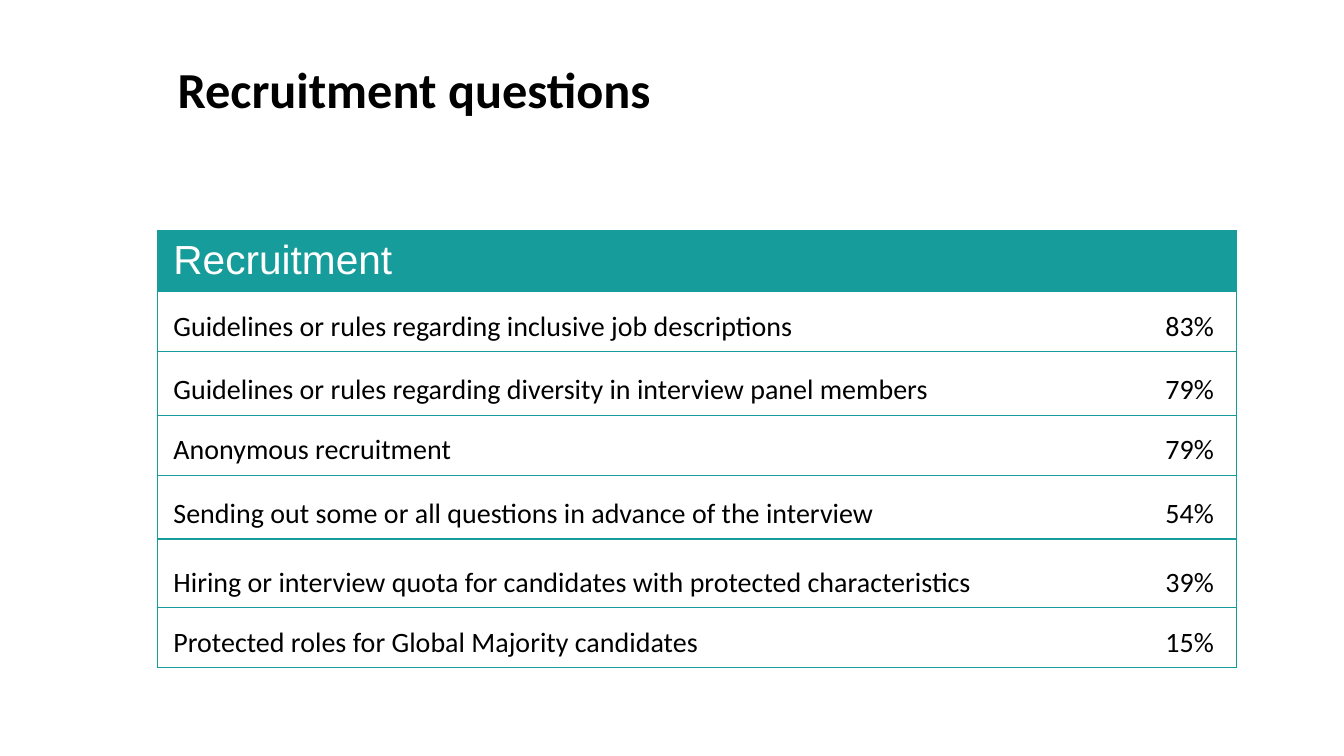
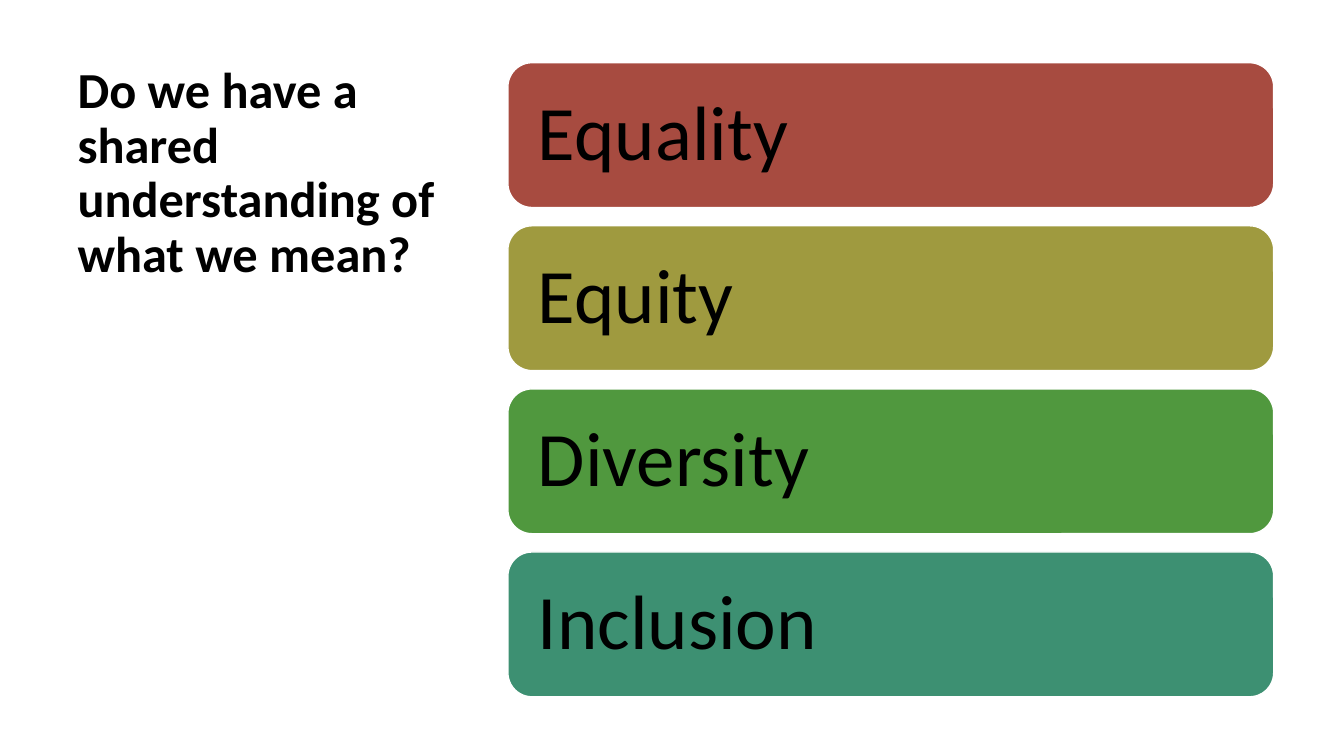
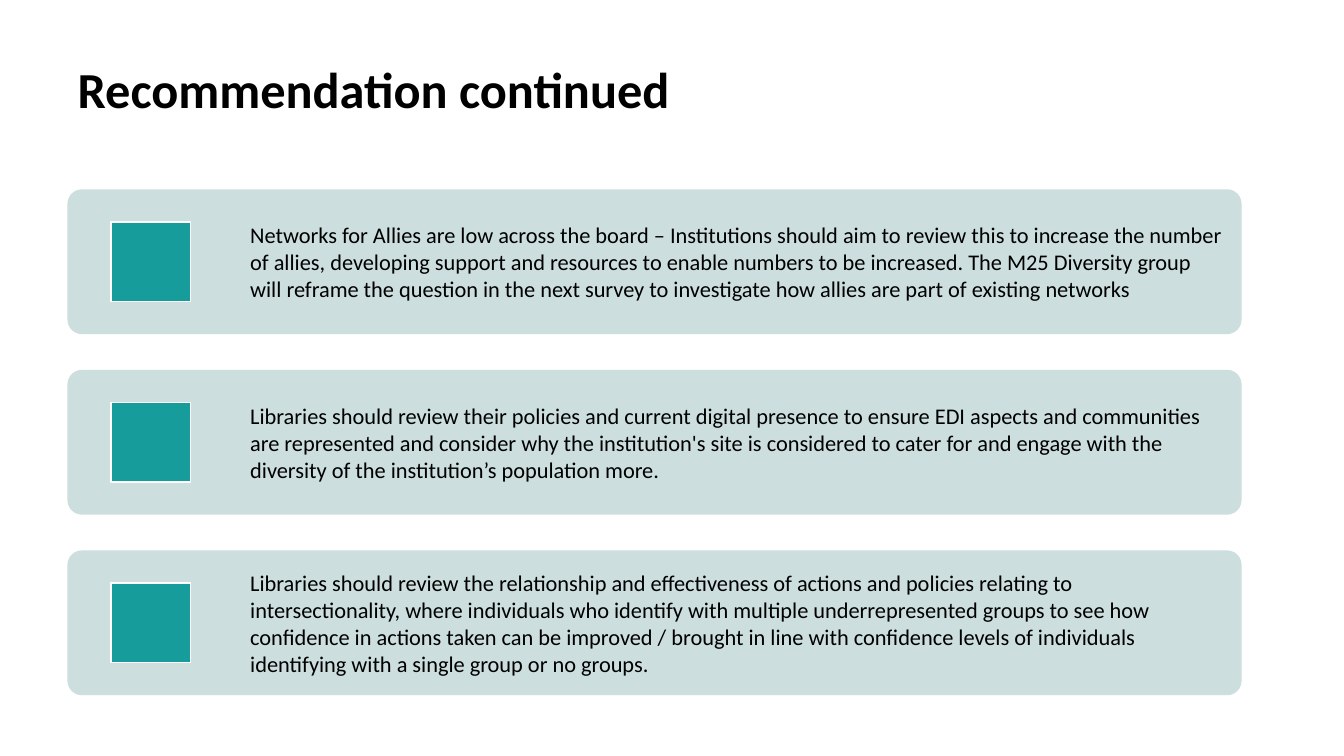
from lxml.etree import SubElement
from pptx import Presentation
from pptx.dml.color import RGBColor
from pptx.enum.shapes import MSO_SHAPE
from pptx.enum.text import MSO_ANCHOR, MSO_AUTO_SIZE, PP_ALIGN
from pptx.oxml.ns import qn
from pptx.util import Cm, Pt

COLOURS = {
    "text": "000000",
    "white": "FFFFFF",
    "teal": "169C9A",
    "mist": "CCDEDE",
    "red": "A74B40",
    "olive": "9F9A3F",
    "green": "50983E",
    "sea": "3D9072",
}
TITLE_TOP = 1.52
MARGIN = 1.7
BLOCK_HEIGHT = 3.65

RECRUITMENT = [
    ("Recruitment", "", 1.52),
    ("Guidelines or rules regarding inclusive job descriptions", "83%", 1.52),
    ("Guidelines or rules regarding diversity in interview panel members", "79%", 1.6),
    ("Anonymous recruitment", "79%", 1.52),
    ("Sending out some or all questions in advance of the interview", "54%", 1.6),
    ("Hiring or interview quota for candidates with protected characteristics", "39%", 1.73),
    ("Protected roles for Global Majority candidates", "15%", 1.52),
]
TERMS = [("Equality", "red"), ("Equity", "olive"), ("Diversity", "green"), ("Inclusion", "sea")]
RECOMMENDATIONS = [
    "Networks for Allies are low across the board – Institutions should aim to review this "
    "to increase the number of allies, developing support and resources to enable numbers "
    "to be increased. The M25 Diversity group will reframe the question in the next survey "
    "to investigate how allies are part of existing networks",
    "Libraries should review their policies and current digital presence to ensure EDI "
    "aspects and communities are represented and consider why the institution's site is "
    "considered to cater for and engage with the diversity of the institution’s population more.",
    "Libraries should review the relationship and effectiveness of actions and policies "
    "relating to intersectionality, where individuals who identify with multiple "
    "underrepresented groups to see how confidence in actions taken can be improved / "
    "brought in line with confidence levels of individuals identifying with a single group "
    "or no groups.",
]


def rgb(colour):
    """Return the named colour."""
    return RGBColor.from_string(COLOURS[colour])


def write(frame, text, size, colour="text", font="Calibri", bold=False,
          align=PP_ALIGN.LEFT, spacing=None):
    """Write one formatted run into the first paragraph of a frame."""
    paragraph = frame.paragraphs[0]
    paragraph.alignment = align
    paragraph.line_spacing = spacing
    run = paragraph.add_run()
    run.text = text
    run.font.name = font
    run.font.size = Pt(size)
    run.font.bold = bold
    run.font.color.rgb = rgb(colour)


def add_titled_slide(deck, text, left, width, height=3.15):
    """Add a slide with the shared title style."""
    slide = deck.slides.add_slide(deck.slide_layouts[5])
    title = slide.shapes.title
    title.left, title.top = Cm(left), Cm(TITLE_TOP)
    title.width, title.height = Cm(width), Cm(height)
    frame = title.text_frame
    frame.word_wrap = True
    frame.auto_size = MSO_AUTO_SIZE.NONE
    frame.vertical_anchor = MSO_ANCHOR.TOP
    write(frame, text, 36, bold=True, spacing=0.9)
    return slide


def add_block(slide, kind, left, top, width, height, fill, outline=None):
    """Add a flat filled shape with an optional outline."""
    block = slide.shapes.add_shape(kind, Cm(left), Cm(top), Cm(width), Cm(height))
    block.shadow.inherit = False
    block.fill.solid()
    block.fill.fore_color.rgb = rgb(fill)
    if outline:
        block.line.color.rgb = rgb(outline)
        block.line.width = Pt(1)
    else:
        block.line.fill.background()
    return block


def fill_block(block, text, size, left, right, spacing=None):
    """Write text into a block, centred vertically between side insets."""
    frame = block.text_frame
    frame.word_wrap = True
    frame.vertical_anchor = MSO_ANCHOR.MIDDLE
    frame.margin_left, frame.margin_right = Cm(left), Cm(right)
    frame.margin_top = frame.margin_bottom = Cm(0.3)
    write(frame, text, size, spacing=spacing)


def set_borders(cell, sides, colour):
    """Draw the given sides of a cell and clear the others."""
    properties = cell._tc.get_or_add_tcPr()
    for position, side in enumerate("LRTB"):
        border = SubElement(properties, qn(f"a:ln{side}"), w=str(Pt(1)))
        if side in sides:
            fill = SubElement(border, qn("a:solidFill"))
            SubElement(fill, qn("a:srgbClr"), val=COLOURS[colour])
        else:
            SubElement(border, qn("a:noFill"))
        properties.insert(position, border)


def format_cell(cell, fill, sides, right_inset):
    """Set the fill, borders and insets of a cell."""
    cell.fill.solid()
    cell.fill.fore_color.rgb = rgb(fill)
    cell.vertical_anchor = MSO_ANCHOR.BOTTOM
    cell.margin_left, cell.margin_right = Cm(0.41), Cm(right_inset)
    cell.margin_top = cell.margin_bottom = Cm(0.2)
    set_borders(cell, sides, "teal")


def add_recruitment_table(slide):
    """Add the table of recruitment measures and their shares."""
    widths = (24.23, 2.97)
    height = sum(row[2] for row in RECRUITMENT)
    table = slide.shapes.add_table(len(RECRUITMENT), 2, Cm(3.96), Cm(5.82),
                                   Cm(sum(widths)), Cm(height)).table
    table.horz_banding = False
    for column, width in zip(table.columns, widths):
        column.width = Cm(width)
    for index, (measure, share, row_height) in enumerate(RECRUITMENT):
        table.rows[index].height = Cm(row_height)
        label, value = table.cell(index, 0), table.cell(index, 1)
        fill = "white" if index else "teal"
        format_cell(label, fill, "LTB", 0.41)
        format_cell(value, fill, "RTB", 0.57)
        if index:
            write(label.text_frame, measure, 20, spacing=Pt(13.5))
            write(value.text_frame, share, 20, align=PP_ALIGN.RIGHT, spacing=Pt(13.5))
        else:
            write(label.text_frame, measure, 29, "white", "Arial", spacing=Pt(13.5))


def add_terms(slide):
    """Stack one coloured bar per term."""
    for index, (term, colour) in enumerate(TERMS):
        bar = add_block(slide, MSO_SHAPE.ROUNDED_RECTANGLE, 12.8, 1.58 + index * 4.11,
                        19.3, BLOCK_HEIGHT, colour, "white")
        fill_block(bar, term, 55, 0.58, 0.58, spacing=0.9)


def add_recommendations(slide):
    """Stack one card with a square marker per recommendation."""
    marker_size = 2
    for index, recommendation in enumerate(RECOMMENDATIONS):
        top = 4.77 + index * 4.55
        card = add_block(slide, MSO_SHAPE.ROUNDED_RECTANGLE, MARGIN, top,
                         29.59, BLOCK_HEIGHT, "mist")
        card.adjustments[0] = 0.1
        fill_block(card, recommendation, 16, 4.5, 0.35)
        add_block(slide, MSO_SHAPE.RECTANGLE, MARGIN + 1.1,
                  top + (BLOCK_HEIGHT - marker_size) / 2,
                  marker_size, marker_size, "teal", "white")


def main():
    """Build and save the three slides."""
    deck = Presentation()
    deck.slide_width, deck.slide_height = Cm(33.87), Cm(19.05)
    add_recruitment_table(add_titled_slide(deck, "Recruitment questions", 4.22, 25.45))
    add_terms(add_titled_slide(deck, "Do we have a shared understanding of what we mean?",
                               MARGIN, 9.7, 16.08))
    add_recommendations(add_titled_slide(deck, "Recommendation continued", MARGIN, 29.59))
    deck.save("out.pptx")


if __name__ == "__main__":
    main()
